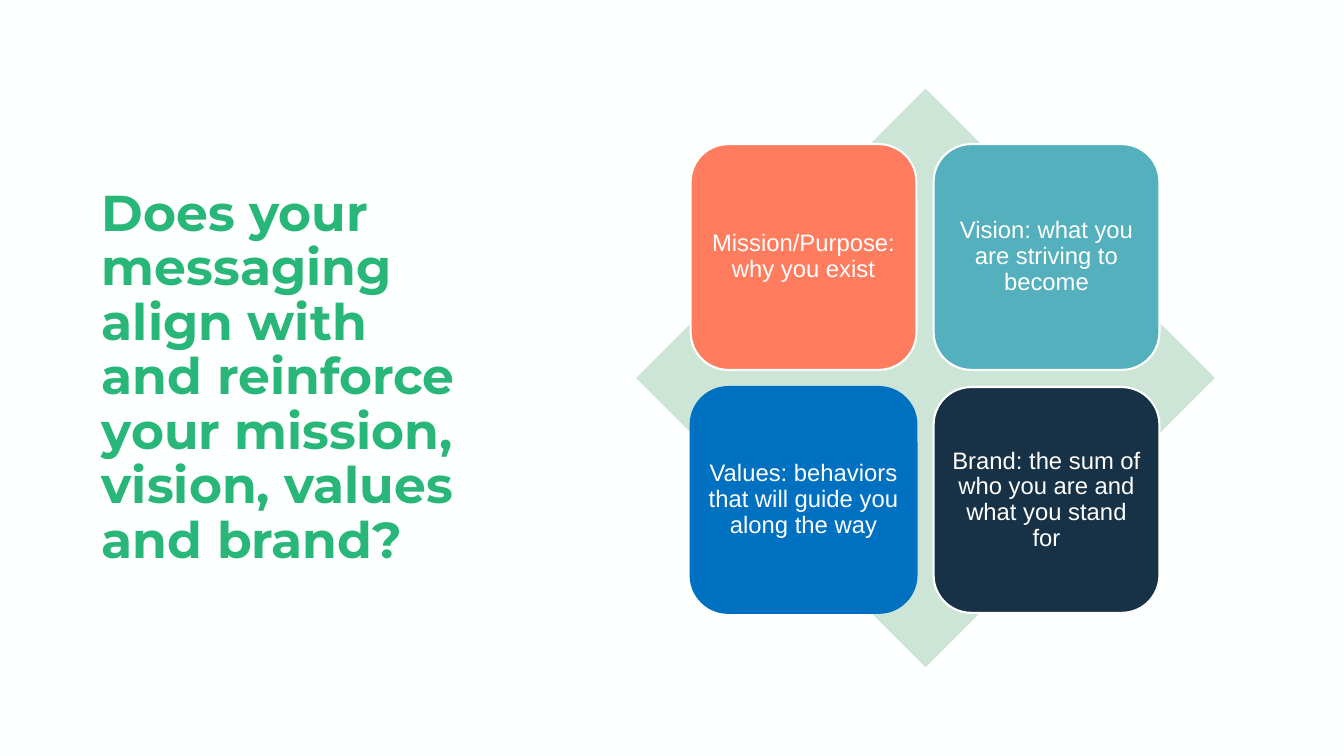
from pptx import Presentation
from pptx.dml.color import RGBColor
from pptx.enum.shapes import MSO_SHAPE
from pptx.enum.text import MSO_ANCHOR, MSO_AUTO_SIZE, PP_ALIGN
from pptx.util import Inches, Pt

DIAMOND = MSO_SHAPE.DIAMOND
ROUNDED = MSO_SHAPE.ROUNDED_RECTANGLE
MIDDLE = MSO_ANCHOR.MIDDLE
LEFT, CENTER = PP_ALIGN.LEFT, PP_ALIGN.CENTER
NO_FIT = MSO_AUTO_SIZE.NONE

PAPER = RGBColor(0xFE, 0xFF, 0xFF)
WHITE = RGBColor(0xFF, 0xFF, 0xFF)
GREEN = RGBColor(0x28, 0xB6, 0x79)
MINT = RGBColor(0xCD, 0xE5, 0xD7)
CORAL = RGBColor(0xFF, 0x7D, 0x5E)
TEAL = RGBColor(0x54, 0xB0, 0xBD)
BLUE = RGBColor(0x00, 0x70, 0xC0)
NAVY = RGBColor(0x17, 0x32, 0x46)


def style_text(shape, text, font_name, size, color, align):
    frame = shape.text_frame
    frame.text = text
    frame.word_wrap = True
    frame.auto_size = NO_FIT
    frame.vertical_anchor = MIDDLE
    para = frame.paragraphs[0]
    para.alignment = align
    para.line_spacing = 0.9
    para.font.name = font_name
    para.font.size = Pt(size)
    para.font.color.rgb = color
    return frame


deck = Presentation()
deck.slide_width = Inches(13.33)
deck.slide_height = Inches(7.5)
page = deck.slides.add_slide(deck.slide_layouts[5])
page.background.fill.solid()
page.background.fill.fore_color.rgb = PAPER

# Title
title = page.shapes.title
title.left, title.top = Inches(0.91), Inches(1.11)
title.width, title.height = Inches(3.89), Inches(5.29)
title_frame = style_text(
    title,
    "Does your messaging align with and reinforce your mission, vision, values and brand?",
    "Montserrat", 36, GREEN, LEFT)
title_frame.paragraphs[0].font.bold = True

# Diamond behind the cards
diamond = page.shapes.add_shape(
    DIAMOND, Inches(6.31), Inches(0.88), Inches(5.74), Inches(5.74))
diamond.shadow.inherit = False
diamond.fill.solid()
diamond.fill.fore_color.rgb = MINT
diamond.line.fill.background()

# Two-by-two grid of cards
CARD_SIZE, CARD_STEP = 2.24, 2.41
cards = [
    ("Mission/Purpose: why you exist", CORAL, PAPER),
    ("Vision: what you are striving to become", TEAL, PAPER),
    ("Values: behaviors that will guide you along the way", BLUE, BLUE),
    ("Brand: the sum of who you are and what you stand for", NAVY, PAPER),
]
for index, (text, fill_color, line_color) in enumerate(cards):
    row, column = divmod(index, 2)
    card = page.shapes.add_shape(
        ROUNDED, Inches(6.85 + column * CARD_STEP), Inches(1.43 + row * CARD_STEP),
        Inches(CARD_SIZE), Inches(CARD_SIZE))
    card.shadow.inherit = False
    card.fill.solid()
    card.fill.fore_color.rgb = fill_color
    card.line.color.rgb = line_color
    card.line.width = Pt(1.5)
    frame = style_text(card, text, "Arial", 17, WHITE, CENTER)
    frame.margin_left = frame.margin_right = Inches(0.07)
    frame.margin_top = frame.margin_bottom = Inches(0.07)

deck.save("out.pptx")
